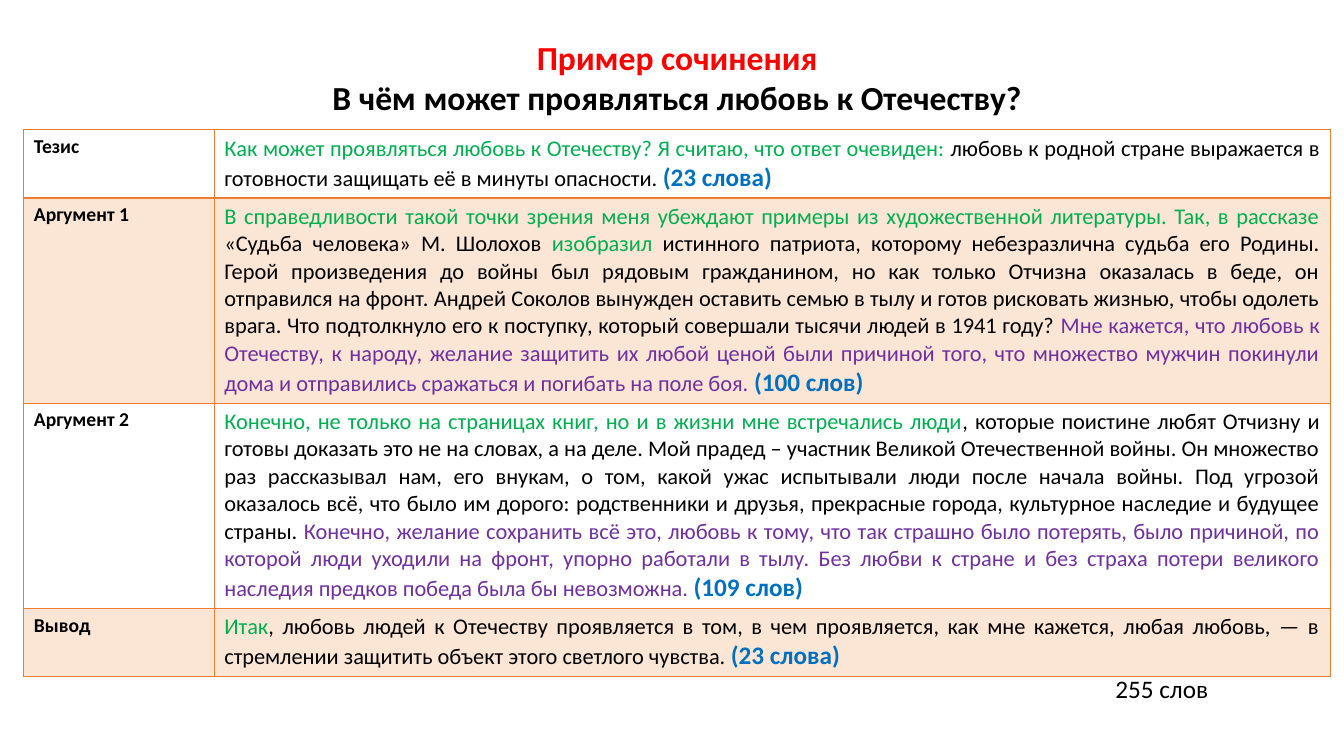
import dataclasses

import lxml.etree
import pptx
import pptx.dml.color
import pptx.enum.text
import pptx.oxml.ns
import pptx.util

Cm = pptx.util.Cm
Align = pptx.enum.text.PP_ALIGN
qn = pptx.oxml.ns.qn


@dataclasses.dataclass(frozen=True)
class Theme:
    font: str = "Calibri"
    ink: str = "000000"
    heading: str = "FF0000"
    cliche: str = "00B050"
    conclusion: str = "7030A0"
    word_count: str = "0070C0"
    accent: str = "ED7D31"
    band_opacity: int = 20
    title_size: int = 24
    label_size: int = 14
    essay_size: int = 16
    count_size: int = 18


THEME = Theme()


def add_run(paragraph, text, size, color=THEME.ink, bold=False):
    run = paragraph.add_run()
    run.text = text
    run.font.name = THEME.font
    run.font.size = pptx.util.Pt(size)
    run.font.bold = bold
    run.font.color.rgb = pptx.dml.color.RGBColor.from_string(color)


def set_border(cell, side, width):
    """Draw one side (L, R, T or B) of a cell, width in points."""
    properties = cell._tc.get_or_add_tcPr()
    line = lxml.etree.SubElement(properties, qn(f"a:ln{side}"), w=str(pptx.util.Pt(width)))
    fill = lxml.etree.SubElement(line, qn("a:solidFill"))
    lxml.etree.SubElement(fill, qn("a:srgbClr"), val=THEME.accent)


def fill_band(cell):
    """Give a cell the translucent accent colour."""
    cell.fill.solid()
    cell.fill.fore_color.rgb = pptx.dml.color.RGBColor.from_string(THEME.accent)
    color = cell._tc.tcPr.find(qn("a:solidFill")).find(qn("a:srgbClr"))
    lxml.etree.SubElement(color, qn("a:alpha"), val=str(THEME.band_opacity * 1000))


class EssaySlide:
    def __init__(self, presentation, theme):
        self.theme = theme
        self.slide = presentation.slides.add_slide(presentation.slide_layouts[5])

    def title(self, lines, left, top, width, height):
        heading = self.slide.shapes.title
        heading.left, heading.top, heading.width, heading.height = left, top, width, height
        frame = heading.text_frame
        frame.word_wrap = True
        frame.auto_size = pptx.enum.text.MSO_AUTO_SIZE.NONE
        frame.vertical_anchor = pptx.enum.text.MSO_ANCHOR.TOP
        for index, (text, color) in enumerate(lines):
            paragraph = frame.add_paragraph() if index else frame.paragraphs[0]
            paragraph.alignment = Align.CENTER
            add_run(paragraph, text, self.theme.title_size, color, bold=True)

    def essay_table(self, parts, left, top, column_widths, row_heights):
        table = self.slide.shapes.add_table(
            len(parts), len(column_widths), left, top, sum(column_widths), sum(row_heights)
        ).table
        table.first_row = table.horz_banding = False
        for column, width in zip(table.columns, column_widths):
            column.width = width
        for index, (label, passages, count) in enumerate(parts):
            table.rows[index].height = row_heights[index]
            label_cell, essay_cell = table.rows[index].cells
            for cell in (label_cell, essay_cell):
                self.cell_style(cell, index)
            add_run(label_cell.text_frame.paragraphs[0], label, self.theme.label_size, bold=True)
            essay = essay_cell.text_frame.paragraphs[0]
            for color, text in passages:
                add_run(essay, text, self.theme.essay_size, color)
            add_run(essay, count, self.theme.count_size, self.theme.word_count, bold=True)

    def cell_style(self, cell, row):
        """Frame the cell, with a thicker line under the first row, and fill odd rows."""
        widths = {"L": 1, "R": 1, "T": 2 if row == 1 else 1, "B": 2 if row == 0 else 1}
        for side, width in widths.items():
            set_border(cell, side, width)
        if row % 2:
            fill_band(cell)
        else:
            cell.fill.background()
        cell.text_frame.paragraphs[0].alignment = Align.JUSTIFY

    def total(self, text, left, top, width, height):
        frame = self.slide.shapes.add_textbox(left, top, width, height).text_frame
        frame.word_wrap = False
        paragraph = frame.paragraphs[0]
        paragraph.line_spacing = 1.07
        paragraph.space_after = pptx.util.Pt(8)
        add_run(paragraph, text, self.theme.count_size)


INK, CLICHE, CONCLUSION = THEME.ink, THEME.cliche, THEME.conclusion

ESSAY = [
    ("Тезис", [
        (CLICHE, "Как может проявляться любовь к Отечеству? Я считаю, что ответ очевиден: "),
        (INK, "любовь к родной стране выражается в готовности защищать её в минуты опасности. "),
    ], "(23 слова)"),
    ("Аргумент 1", [
        (CLICHE, "В справедливости такой точки зрения меня убеждают примеры из художественной "
                 "литературы. Так, в рассказе "),
        (INK, "«Судьба человека» М. Шолохов "),
        (CLICHE, "изобразил "),
        (INK, "истинного патриота, которому небезразлична судьба его Родины. Герой произведения "
              "до войны был рядовым гражданином, но как только Отчизна оказалась в беде, он "
              "отправился на фронт. Андрей Соколов вынужден оставить семью в тылу и готов "
              "рисковать жизнью, чтобы одолеть врага. Что подтолкнуло его к поступку, который "
              "совершали тысячи людей в 1941 году? "),
        (CONCLUSION, "Мне кажется, что любовь к Отечеству, к народу, желание защитить их любой "
                     "ценой были причиной того, что множество мужчин покинули дома и отправились "
                     "сражаться и погибать на поле боя. "),
    ], "(100 слов)"),
    ("Аргумент 2", [
        (CLICHE, "Конечно, не только на страницах книг, но и в жизни мне встречались люди"),
        (INK, ", которые поистине любят Отчизну и готовы доказать это не на словах, а на деле. "
              "Мой прадед – участник Великой Отечественной войны. Он множество раз рассказывал "
              "нам, его внукам, о том, какой ужас испытывали люди после начала войны. Под "
              "угрозой оказалось всё, что было им дорого: родственники и друзья, прекрасные "
              "города, культурное наследие и будущее страны. "),
        (CONCLUSION, "Конечно, желание сохранить всё это, любовь к тому, что так страшно было "
                     "потерять, было причиной, по которой люди уходили на фронт, упорно работали "
                     "в тылу. Без любви к стране и без страха потери великого наследия предков "
                     "победа была бы невозможна. "),
    ], "(109 слов)"),
    ("Вывод", [
        (CLICHE, "Итак"),
        (INK, ", любовь людей к Отечеству проявляется в том, в чем проявляется, как мне кажется, "
              "любая любовь, — в стремлении защитить объект этого светлого чувства. "),
    ], "(23 слова)"),
]


def main():
    presentation = pptx.Presentation()
    presentation.slide_width, presentation.slide_height = Cm(33.87), Cm(19.05)
    slide = EssaySlide(presentation, THEME)
    slide.title(
        [("Пример сочинения", THEME.heading),
         ("В чём может проявляться любовь к Отечеству?", THEME.ink)],
        Cm(4.85), Cm(0.8), Cm(24.43), Cm(2.4),
    )
    short, long = Cm(1.7), Cm(5.15)
    slide.essay_table(ESSAY, Cm(0.6), Cm(3.27), [Cm(4.8), Cm(28.12)], [short, long, long, short])
    slide.total("255 слов", Cm(27.86), Cm(16.8), Cm(2.87), Cm(1.09))
    presentation.save("out.pptx")


if __name__ == "__main__":
    main()
